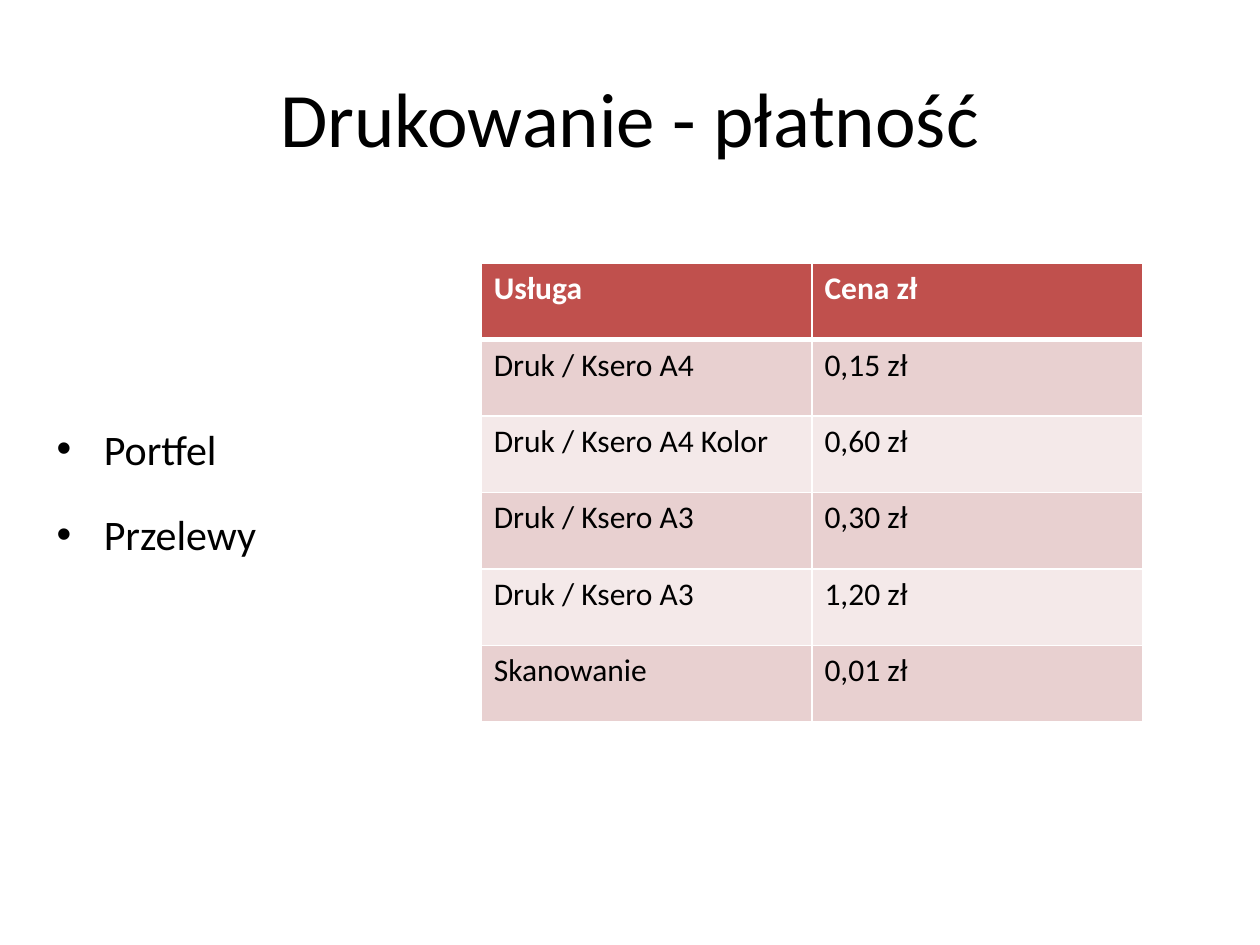
from lxml import etree
from pptx import Presentation
from pptx.dml.color import RGBColor
from pptx.enum import text
from pptx.oxml import ns
from pptx.util import Pt

COLOURS = {"ink": "000000", "paper": "FFFFFF", "header": "C0504D",
           "band_dark": "E8D0D0", "band_light": "F4E9E9"}
PRICES = [
    ("Usługa", "Cena zł"),
    ("Druk / Ksero A4", "0,15 zł"),
    ("Druk / Ksero A4 Kolor", "0,60 zł"),
    ("Druk / Ksero A3", "0,30 zł"),
    ("Druk / Ksero A3", "1,20 zł"),
    ("Skanowanie", "0,01 zł"),
]
PAYMENTS = ["Portfel", "Przelewy"]


class PriceSlide:
    """Holds the text style and the page, and adds each kind of element."""

    def __init__(self, page, font="Calibri"):
        self.page = page
        self.font = font

    def colour(self, name):
        return RGBColor.from_string(COLOURS[name])

    def add_span(self, para, words, size, colour="ink", bold=False):
        span = para.add_run()
        span.text = words
        for key, value in {"name": self.font, "size": Pt(size), "bold": bold}.items():
            setattr(span.font, key, value)
        span.font.color.rgb = self.colour(colour)

    def add_box(self, left, top, width, height, anchor):
        box = self.page.shapes.add_textbox(Pt(left), Pt(top), Pt(width), Pt(height))
        frame = box.text_frame
        frame.word_wrap = True
        frame.vertical_anchor = anchor
        return frame

    def add_title(self, words, left, top, width, height):
        frame = self.add_box(left, top, width, height, text.MSO_ANCHOR.MIDDLE)
        para = frame.paragraphs[0]
        para.alignment = text.PP_ALIGN.CENTER
        self.add_span(para, words, 44)

    def add_bullets(self, items, left, top, width, height, indent=27):
        frame = self.add_box(left, top, width, height, text.MSO_ANCHOR.TOP)
        for index, words in enumerate(items):
            para = frame.add_paragraph() if index else frame.paragraphs[0]
            para.line_spacing = 1.7
            properties = para._p.get_or_add_pPr()
            properties.set("marL", str(Pt(indent)))
            properties.set("indent", str(-Pt(indent)))
            etree.SubElement(properties, ns.qn("a:buFont"), typeface="Arial")
            etree.SubElement(properties, ns.qn("a:buChar"), char="•")
            self.add_span(para, words, 24)

    def add_borders(self, cell, widths):
        properties = cell._tc.get_or_add_tcPr()
        for side, width in widths.items():
            line = etree.SubElement(properties, ns.qn(f"a:ln{side}"), w=str(Pt(width)))
            fill = etree.SubElement(line, ns.qn("a:solidFill"))
            etree.SubElement(fill, ns.qn("a:srgbClr"), val=COLOURS["paper"])

    def add_prices(self, rows, left, top, width, height):
        frame = self.page.shapes.add_table(
            len(rows), len(rows[0]), Pt(left), Pt(top), Pt(width), Pt(height))
        for row, values in enumerate(rows):
            header = row == 0
            band = "header" if header else "band_dark" if row % 2 else "band_light"
            widths = {"L": 1, "R": 1, "T": 3 if row == 1 else 1, "B": 3 if header else 1}
            for column, words in enumerate(values):
                cell = frame.table.cell(row, column)
                self.add_borders(cell, widths)
                cell.fill.solid()
                cell.fill.fore_color.rgb = self.colour(band)
                self.add_span(cell.text_frame.paragraphs[0], words, 18,
                              "paper" if header else "ink", header)


def main():
    deck = Presentation()
    deck.slide_width, deck.slide_height = Pt(720), Pt(540)
    slide = PriceSlide(deck.slides.add_slide(deck.slide_layouts[6]))
    slide.add_title("Drukowanie - płatność", 36, 21.6, 648, 90)
    slide.add_bullets(PAYMENTS, 25.2, 218.2, 318.2, 126.7)
    slide.add_prices(PRICES, 275, 150.5, 378, 262)
    deck.save("out.pptx")


if __name__ == "__main__":
    main()
